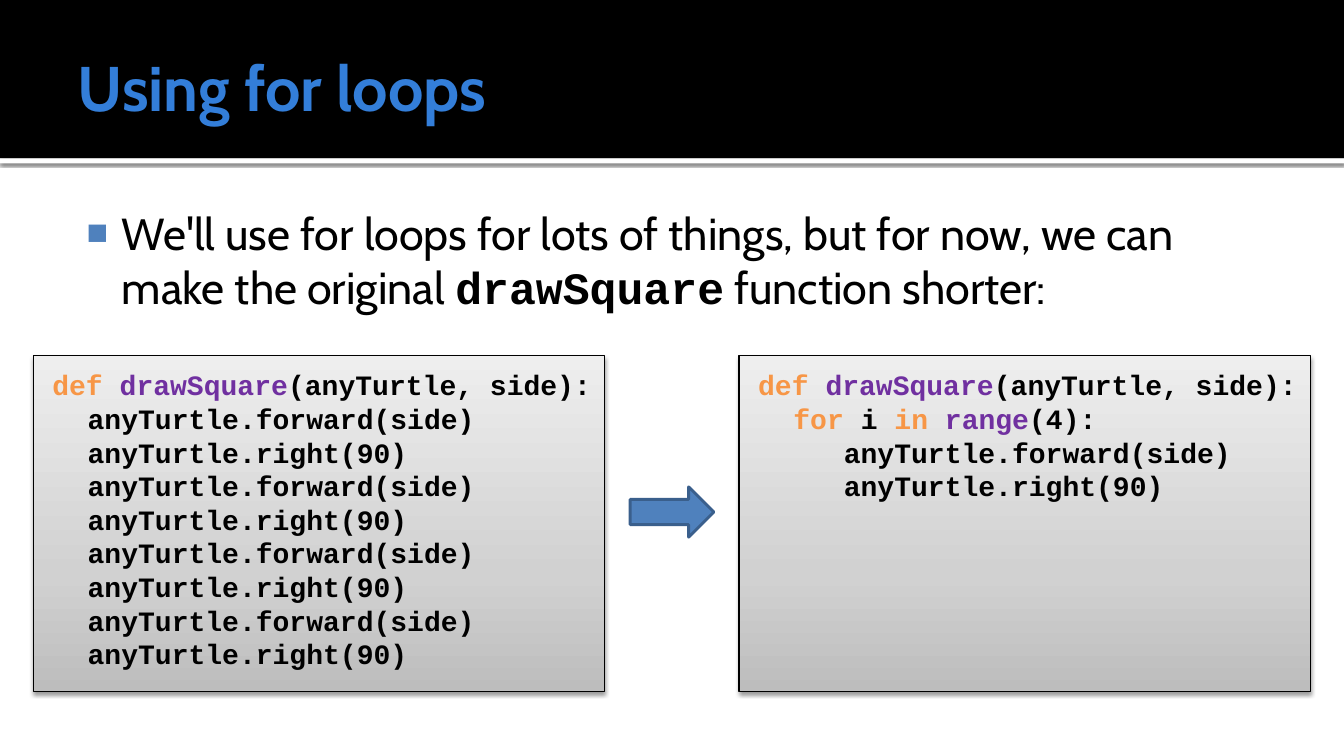
"""Build a slide that shortens a turtle function with a for loop."""
import pptx
import pptx.dml.color
import pptx.enum.shapes
import pptx.enum.text
import pptx.oxml
import pptx.oxml.ns
import pptx.util

Color = pptx.dml.color.RGBColor
Kind = pptx.enum.shapes.MSO_SHAPE
Anchor = pptx.enum.text.MSO_ANCHOR
BLACK = Color(0x00, 0x00, 0x00)
WHITE = Color(0xFF, 0xFF, 0xFF)
SKY = Color(0x33, 0x7E, 0xD9)
BLUE = Color(0x4F, 0x81, 0xBD)
NAVY = Color(0x3A, 0x5F, 0x8C)
ORANGE = Color(0xF7, 0x96, 0x46)
PURPLE = Color(0x70, 0x30, 0xA0)
STEEL = Color(0xBD, 0xBD, 0xBD)
SILVER = Color(0xD1, 0xD1, 0xD1)
PALE = Color(0xEE, 0xEE, 0xEE)
SHADES = ((0, STEEL), (35, SILVER), (100, PALE))
SCALE = 9144
SANS, MONO = "Cabin", "Courier New"


def px(count):
    return pptx.util.Emu(count * SCALE)


def make(markup):
    space = pptx.oxml.ns.nsdecls("a")
    return pptx.oxml.parse_xml(markup.replace(">", f" {space}>", 1))


def write(para, text, font=SANS, size=20, color=BLACK, bold=False):
    run = para.add_run()
    run.text = text
    run.font.name, run.font.size, run.font.bold = font, pptx.util.Pt(size), bold
    run.font.color.rgb = color


class Deck:
    """Hold the style and the current slide."""

    def __init__(self):
        self.show = pptx.Presentation()
        self.show.slide_width, self.show.slide_height = px(1333), px(750)
        self.slide = self.show.slides.add_slide(self.show.slide_layouts[5])
        self.shapes = self.slide.shapes

    def frame(self, shape, insets, anchor=Anchor.TOP):
        frame = shape.text_frame
        frame.word_wrap = True
        frame.auto_size = pptx.enum.text.MSO_AUTO_SIZE.NONE
        frame.vertical_anchor = anchor
        (frame.margin_left, frame.margin_top,
         frame.margin_right, frame.margin_bottom) = map(px, insets)
        return frame

    def indent(self, para, left):
        para.alignment = pptx.enum.text.PP_ALIGN.LEFT
        props = para._p.get_or_add_pPr()
        props.set("marL", str(px(left)))
        props.set("indent", str(px(-35)))
        return props

    def block(self, box, fill, kind=Kind.RECTANGLE, line=None, width=1):
        shape = self.shapes.add_shape(kind, *map(px, box))
        shape.shadow.inherit = False
        shape.fill.solid()
        shape.fill.fore_color.rgb = fill
        if line is None:
            shape.line.fill.background()
        else:
            shape.line.color.rgb = line
            shape.line.width = pptx.util.Pt(width)
        return shape

    def shade(self, shape, alpha, blur, dist):
        effect = shape._element.spPr.find(pptx.oxml.ns.qn("a:effectLst"))
        effect.append(make(
            f'<a:outerShdw blurRad="{pptx.util.Pt(blur)}" dist="{pptx.util.Pt(dist)}"'
            f' dir="5400000" algn="ctr" rotWithShape="0"><a:srgbClr val="{BLACK}">'
            f'<a:alpha val="{alpha * 1000}"/></a:srgbClr></a:outerShdw>'))

    def title(self, text, box):
        title = self.shapes.title
        title.left, title.top, title.width, title.height = map(px, box)
        self.shapes._spTree.append(title._element)
        para = self.frame(title, (10, 5, 5, 5), Anchor.MIDDLE).paragraphs[0]
        para.alignment = pptx.enum.text.PP_ALIGN.LEFT
        write(para, text, size=45, color=SKY, bold=True)

    def bullet(self, runs, box):
        shape = self.shapes.add_textbox(*map(px, box))
        para = self.frame(shape, (6, 10, 10, 5)).paragraphs[0]
        props = self.indent(para, 48)
        props.append(make(f'<a:buClr><a:srgbClr val="{BLUE}"/></a:buClr>'))
        props.append(make('<a:buSzPct val="80000"></a:buSzPct>'))
        props.append(make('<a:buFont typeface="Arial"></a:buFont>'))
        props.append(make('<a:buChar char="■"></a:buChar>'))
        for text, style in runs:
            write(para, text, size=32, **style)

    def code(self, lines, box):
        shape = self.block(box, PALE, line=BLACK, width=0.75)
        props = shape._element.spPr
        stops = "".join(f'<a:gs pos="{spot * 1000}"><a:srgbClr val="{tone}"/></a:gs>'
                        for spot, tone in SHADES)
        props.replace(props.find(pptx.oxml.ns.qn("a:solidFill")), make(
            f'<a:gradFill rotWithShape="1"><a:gsLst>{stops}</a:gsLst>'
            '<a:lin ang="16200000" scaled="0"/></a:gradFill>'))
        self.shade(shape, 38, 3.1, 1.6)
        frame = self.frame(shape, (6, 12, 10, 5))
        for row, (level, runs) in enumerate(lines):
            para = frame.add_paragraph() if row else frame.paragraphs[0]
            para.level = level
            para.line_spacing = pptx.util.Pt(24)
            self.indent(para, 48 + 50 * level)
            for text, color in runs:
                write(para, text, font=MONO, color=color, bold=True)


def main():
    deck = Deck()
    strip = deck.block((0, 157, 1333, 5), WHITE)
    deck.shade(strip, 60, 2.5, 0.8)
    deck.block((0, 0, 1333, 157), BLACK)
    deck.title("Using for loops", (67, 17, 1200, 137))
    deck.bullet([
        ("We'll use for loops for lots of things, but for now, we can make the original ", {}),
        ("drawSquare", {"font": MONO, "bold": True}),
        (" function shorter:", {}),
    ], (67, 194, 1200, 506))

    head = (0, [("def ", ORANGE), ("drawSquare", PURPLE), ("(anyTurtle, side):", BLACK)])
    loop = (0, [("\t", BLACK), ("for ", ORANGE), ("i ", BLACK), ("in ", ORANGE),
                ("range", PURPLE), ("(4):", BLACK)])
    steps = [[("\tanyTurtle.forward(side)", BLACK)], [("\tanyTurtle.right(90)", BLACK)]]
    deck.code([head] + [(0, step) for step in steps] * 4, (33, 353, 567, 333))
    deck.code([head, loop] + [(1, step) for step in steps], (733, 353, 567, 333))
    deck.block((625, 483, 83, 50), BLUE, Kind.RIGHT_ARROW, NAVY, 2)
    deck.show.save("out.pptx")


if __name__ == "__main__":
    main()
